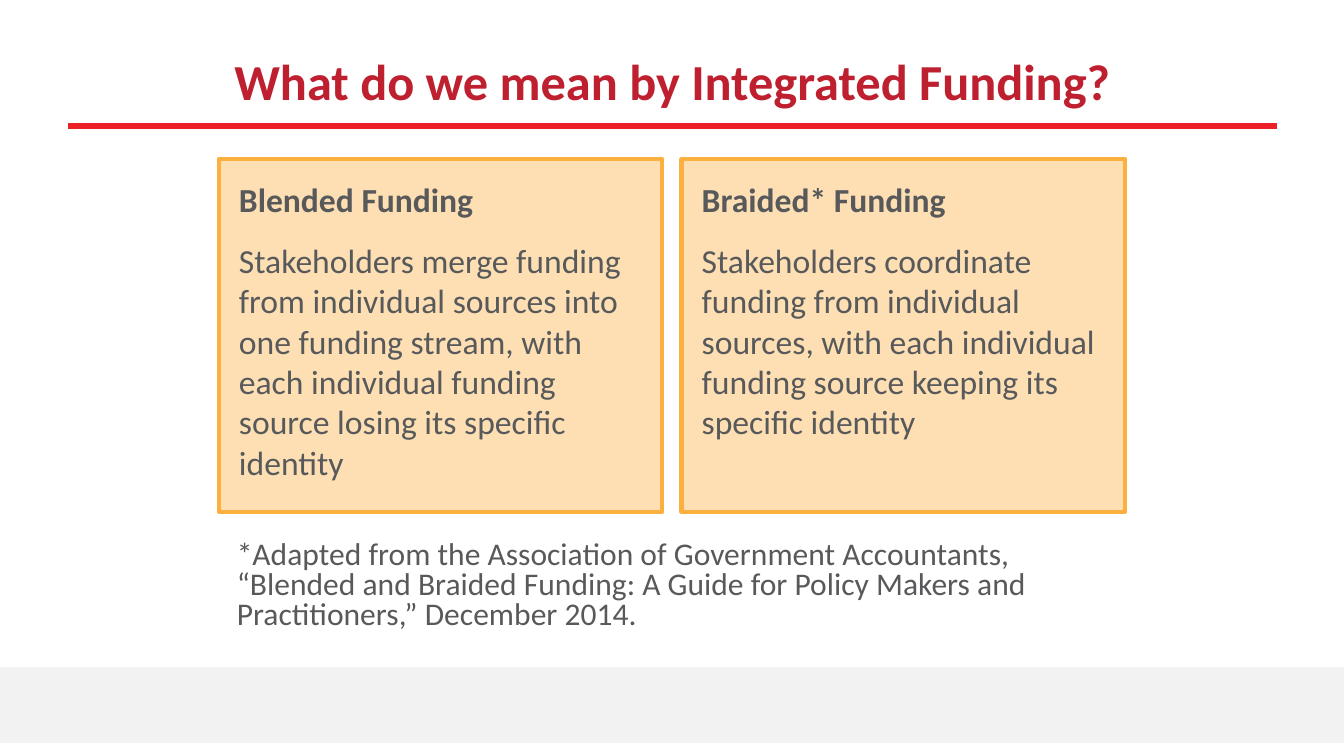
from typing import NamedTuple

from lxml.etree import SubElement
from pptx import Presentation
from pptx.dml.color import RGBColor
from pptx.enum.shapes import MSO_CONNECTOR, MSO_SHAPE
from pptx.enum.text import MSO_ANCHOR as Anchor, MSO_AUTO_SIZE, PP_ALIGN as Align
from pptx.oxml.ns import qn
from pptx.util import Emu, Pt

EMU_PER_PX = 9144  # 100 px to the inch
FONT = "Calibri"
RED, RULE_RED, GREY = "BE202F", "EC2027", "58595B"
PEACH, ORANGE, BAND_GREY = "FDDFB3", "FBB040", "F2F2F2"
COMPARISON_LAYOUT = 4
CARD_TOP, CARD_WIDTH, CARD_HEIGHT = 158, 440, 350
CARD_PADDING, HEADING_HEIGHT, INSET = 10, 70, 10


class Box(NamedTuple):
    left: int
    top: int
    width: int
    height: int


class Card(NamedTuple):
    left: int
    heading: str
    body: str
    body_height: int


class TextStyle(NamedTuple):
    size: float
    color: str = GREY
    bold: bool = False
    align: Align = Align.LEFT
    anchor: Anchor = Anchor.TOP
    space_before: float = 4.8
    line_spacing: float = 1.0


TITLE = TextStyle(36, RED, True, Align.CENTER, Anchor.MIDDLE, 0)
HEADING = TextStyle(24, bold=True, anchor=Anchor.BOTTOM)
BODY = TextStyle(24)
FOOTNOTE = TextStyle(22.5, anchor=Anchor.BOTTOM, space_before=18, line_spacing=0.8)

CARDS = [
    Card(217, "Blended Funding",
         "Stakeholders merge funding from individual sources into one funding "
         "stream, with each individual funding source losing its specific identity", 230),
    Card(676, "Braided* Funding",
         "Stakeholders coordinate funding from individual sources, with each "
         "individual funding source keeping its specific identity", 247),
]


def px(length: int) -> Emu:
    return Emu(length * EMU_PER_PX)


def rgb(color: str) -> RGBColor:
    return RGBColor.from_string(color)


def add_rectangle(slide, box: Box, fill: str, line: str = "", line_width: float = 0) -> None:
    shape = slide.shapes.add_shape(MSO_SHAPE.RECTANGLE, *map(px, box))
    shape.shadow.inherit = False
    shape.fill.solid()
    shape.fill.fore_color.rgb = rgb(fill)
    if line:
        shape.line.color.rgb = rgb(line)
        shape.line.width = Pt(line_width)
    else:
        shape.line.fill.background()


def add_rule(slide, left: int, right: int, top: int) -> None:
    rule = slide.shapes.add_connector(
        MSO_CONNECTOR.STRAIGHT, px(left), px(top), px(right), px(top))
    rule.line.color.rgb = rgb(RULE_RED)
    rule.line.width = Pt(5)
    SubElement(rule.element.spPr, qn("a:effectLst"))


def write_text(shape, text: str, style: TextStyle, bottom_inset: int = INSET) -> None:
    frame = shape.text_frame
    frame.word_wrap = True
    frame.auto_size = MSO_AUTO_SIZE.NONE
    frame.vertical_anchor = style.anchor
    frame.margin_left = frame.margin_right = frame.margin_top = px(INSET)
    frame.margin_bottom = px(bottom_inset)
    paragraph = frame.paragraphs[0]
    paragraph.alignment = style.align
    paragraph.space_before = Pt(style.space_before)
    paragraph.line_spacing = style.line_spacing
    properties = paragraph._p.get_or_add_pPr()
    properties.set("marL", "0")
    properties.set("indent", "0")
    SubElement(properties, qn("a:buNone"))
    run = paragraph.add_run()
    run.text = text
    run.font.name = FONT
    run.font.size = Pt(style.size)
    run.font.bold = style.bold
    run.font.color.rgb = rgb(style.color)


def fill_placeholder(slide, index: int, box: Box, text: str, style: TextStyle) -> None:
    """Move a placeholder in front of everything drawn so far and write in it."""
    shape = slide.placeholders[index]
    shape.left, shape.top, shape.width, shape.height = map(px, box)
    shape.element.getparent().append(shape.element)
    write_text(shape, text, style)


def add_card(slide, card: Card, heading_index: int) -> None:
    add_rectangle(slide, Box(card.left, CARD_TOP, CARD_WIDTH, CARD_HEIGHT), PEACH, ORANGE, 3)
    left, width = card.left + CARD_PADDING, CARD_WIDTH - 2 * CARD_PADDING
    fill_placeholder(slide, heading_index, Box(left, CARD_TOP, width, HEADING_HEIGHT),
                     card.heading, HEADING)
    fill_placeholder(slide, heading_index + 1,
                     Box(left, CARD_TOP + HEADING_HEIGHT, width, card.body_height),
                     card.body, BODY)


def main() -> None:
    presentation = Presentation()
    presentation.slide_width, presentation.slide_height = px(1333), px(750)
    slide = presentation.slides.add_slide(presentation.slide_layouts[COMPARISON_LAYOUT])

    add_rule(slide, 67, 1267, 125)
    add_rectangle(slide, Box(0, 662, 1333, 75), BAND_GREY)
    fill_placeholder(slide, 0, Box(217, 30, 900, 100),
                     "What do we mean by Integrated Funding?", TITLE)
    for position, card in enumerate(CARDS):
        add_card(slide, card, heading_index=1 + 2 * position)

    footnote = slide.shapes.add_textbox(*map(px, Box(225, 550, 891, 117)))
    write_text(footnote,
               "*Adapted from the Association of Government Accountants, “Blended and "
               "Braided Funding: A Guide for Policy Makers and Practitioners,” December 2014.",
               FOOTNOTE, bottom_inset=40)
    presentation.save("out.pptx")


if __name__ == "__main__":
    main()
